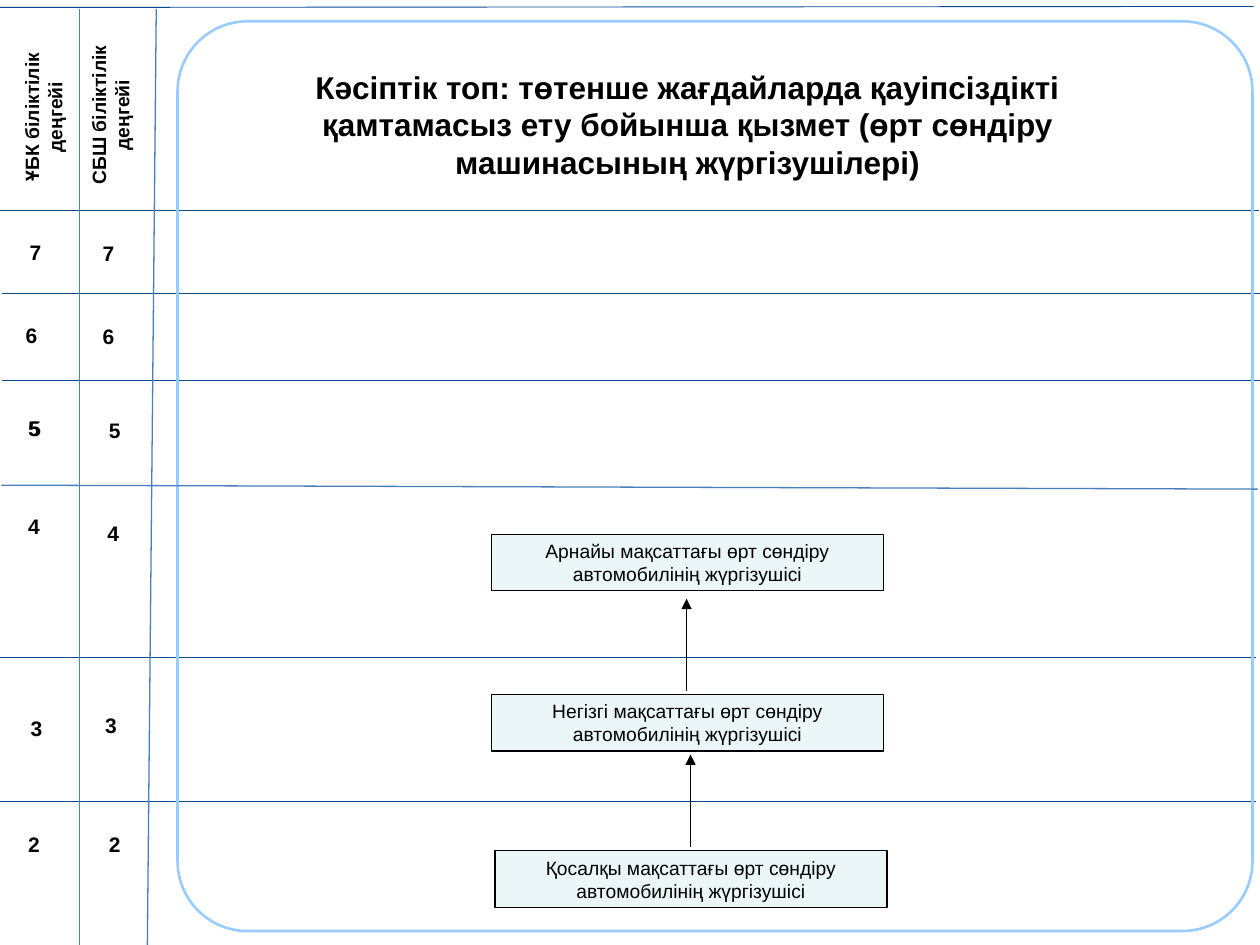
"""Build the slide of career steps for fire engine drivers by qualification level."""
from lxml import etree
from pptx import Presentation
from pptx import util as u
from pptx.dml.color import RGBColor
from pptx.enum import shapes, text
from pptx.oxml.ns import qn

BLACK = RGBColor(0, 0, 0)
NAVY = RGBColor(0x08, 0x4A, 0x92)
BLUE = RGBColor(0x4B, 0x7E, 0xBC)
SKY = RGBColor(0x99, 0xCC, 0xFF)
PALE = RGBColor(0xEB, 0xF6, 0xF9)

TITLE = ("Кәсіптік топ: төтенше жағдайларда қауіпсіздікті қамтамасыз ету "
         "бойынша қызмет (өрт сөндіру машинасының жүргізушілері)")
HEADS = [("ҰБК біліктілік деңгейі", 0.3, 4.22), ("СБШ біліктілік деңгейі", 1.65, 4.14)]
LEVELS = [
    ("7", (0.23, 4.72), (1.7, 4.75)),
    ("6", (0.15, 6.4), (1.7, 6.43)),
    ("5", (0.2, 8.28), (1.83, 8.31)),
    ("4", (0.2, 10.26), (1.8, 10.39)),
    ("3", (0.25, 14.33), (1.75, 14.27)),
    ("2", (0.2, 16.66), (1.83, 16.66)),
]
JOBS = [("Қосалқы", 9.98, 17.15), ("Негізгі", 9.91, 14), ("Арнайы", 9.91, 10.77)]
JOB_TAIL = "мақсаттағы өрт сөндіру автомобилінің жүргізушісі"
ROWS = [(-0.03, 4.24), (0.05, 5.92), (0.05, 7.67), (-0.08, 13.26), (-0.08, 16.15)]
RULES = [(1.6, 0.18, 1.6, 19.13), (3.15, 0.18, 2.97, 19.1), (0.03, 9.78, 25.35, 9.86)]
ARROWS = [(13.84, 13.92, 12.07), (13.92, 17.07, 15.21)]
WIDE, HIGH = 25.4, 19.05

deck = Presentation()
deck.slide_width, deck.slide_height = u.Cm(WIDE), u.Cm(HIGH)
page = deck.slides.add_slide(deck.slide_layouts[6]).shapes


def draw_line(x1, y1, x2, y2, color=NAVY, width=0.5, arrow=False):
    line = page.add_connector(shapes.MSO_CONNECTOR.STRAIGHT, *map(u.Cm, (x1, y1, x2, y2)))
    line.line.color.rgb = color
    line.line.width = u.Pt(width)
    props = line._element.spPr
    if arrow:
        etree.SubElement(props.find(qn("a:ln")), qn("a:tailEnd"), type="triangle")
    etree.SubElement(props, qn("a:effectLst"))


def draw_box(at, round=0, fill=None, edge=None, width=0.75):
    box = page.add_shape(shapes.MSO_SHAPE.ROUNDED_RECTANGLE, *map(u.Cm, at))
    box.adjustments[0] = round
    box.shadow.inherit = False
    if fill is None:
        box.fill.background()
    else:
        box.fill.solid()
        box.fill.fore_color.rgb = fill
    if edge is None:
        box.line.fill.background()
    else:
        box.line.color.rgb = edge
        box.line.width = u.Pt(width)
    return box


def put_text(box, words, size=12, bold=True, inset=0.1, turn=False,
             anchor=text.MSO_ANCHOR.MIDDLE):
    frame = box.text_frame
    frame.word_wrap = True
    frame.auto_size = text.MSO_AUTO_SIZE.SHAPE_TO_FIT_TEXT
    frame.vertical_anchor = anchor
    if inset is not None:
        frame.margin_left = frame.margin_right = u.Cm(inset)
        frame.margin_top = frame.margin_bottom = u.Cm(inset)
    if turn:
        frame._txBody.bodyPr.set("vert", "vert270")
    para = frame.paragraphs[0]
    para.alignment = text.PP_ALIGN.CENTER
    run = para.add_run()
    run.text = words
    run.font.name = "Arial"
    run.font.size = u.Pt(size)
    run.font.bold = bold
    run.font.color.rgb = BLACK


draw_line(-0.08, 0.15, 25.27, 0.13)
for x, y in ROWS:
    draw_line(x, y, x + WIDE, y)

draw_box((3.58, 0.43, 21.67, 18.34), round=0.077, edge=SKY, width=1.5)
title = page.add_textbox(*map(u.Cm, (4.17, 1.24, 19.38, 2.57)))
put_text(title, TITLE, size=18, inset=None, anchor=text.MSO_ANCHOR.TOP)

for words, x, tall in HEADS:
    put_text(draw_box((x, 0.25, 1.14, tall)), words, size=11, turn=True)
for rule in RULES:
    draw_line(*rule, color=BLUE, width=0.75)

for level, *spots in LEVELS:
    for x, y in spots:
        put_text(draw_box((x, y, 0.97, 0.71)), level)
put_text(draw_box((0.23, 8.28, 0.97, 0.71)), "5", bold=False)

for kind, x, y in JOBS:
    job = draw_box((x, y, 7.9, 1.14), fill=PALE, edge=BLACK)
    put_text(job, f"{kind} {JOB_TAIL}", size=11, bold=False)
for x, low, top in ARROWS:
    draw_line(x, low, x, top, color=BLACK, width=1, arrow=True)

deck.save("out.pptx")
